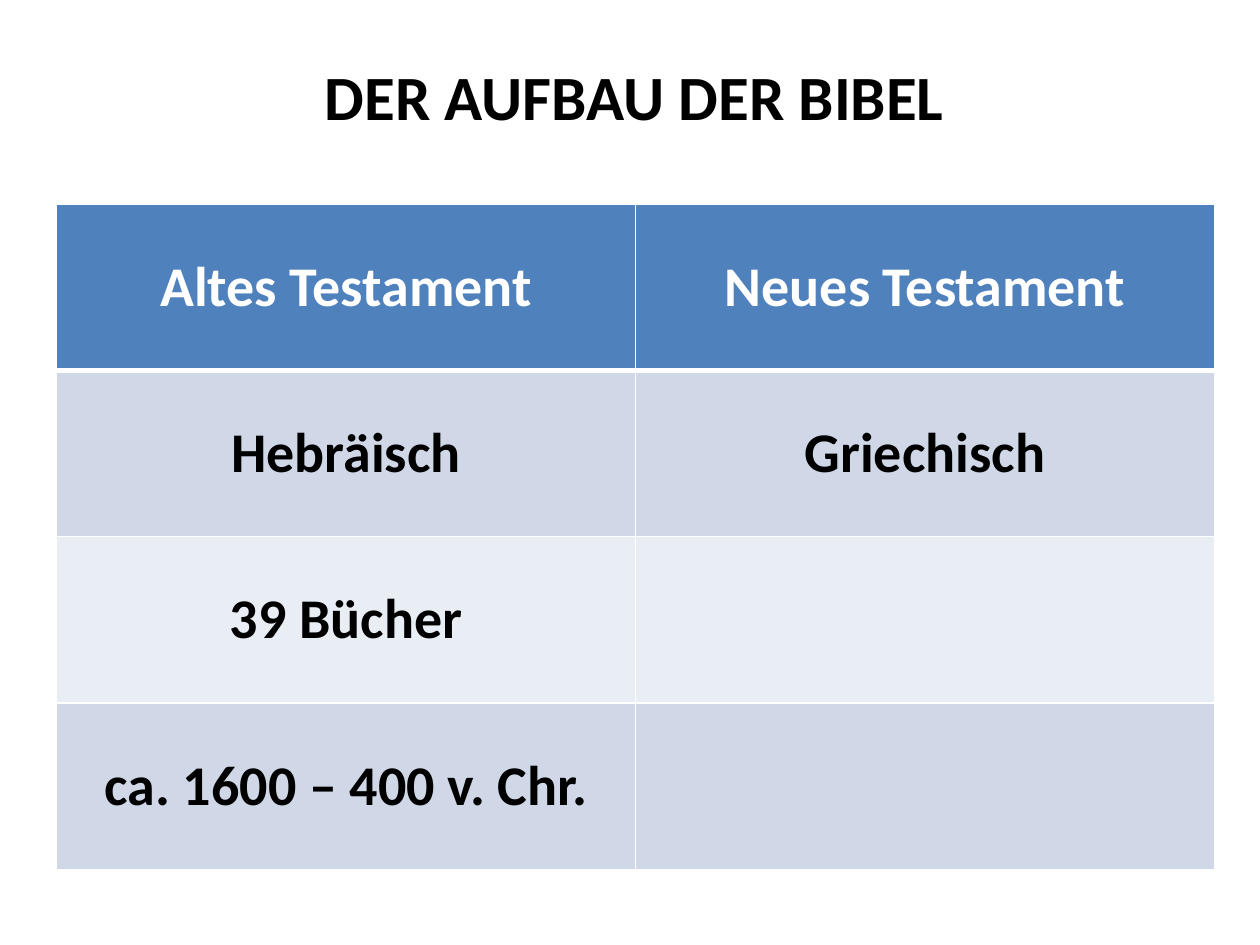
from dataclasses import dataclass

from lxml import etree
from pptx import Presentation
from pptx.dml.color import RGBColor
from pptx.enum.shapes import MSO_SHAPE
from pptx.enum.text import MSO_ANCHOR, PP_ALIGN
from pptx.oxml.ns import qn
from pptx.util import Inches, Pt

RECTANGLE = MSO_SHAPE.RECTANGLE
MIDDLE = MSO_ANCHOR.MIDDLE
CENTER = PP_ALIGN.CENTER

TITLE = "DER AUFBAU DER BIBEL"
ROWS = [
    ("Altes Testament", "Neues Testament"),
    ("Hebräisch", "Griechisch"),
    ("39 Bücher", ""),
    ("ca. 1600 – 400 v. Chr.", ""),
]


@dataclass(frozen=True)
class Theme:
    font: str = "Calibri"
    title_size: int = 36
    cell_size: int = 32
    white: str = "FFFFFF"
    black: str = "000000"
    header: str = "4F81BD"
    bands: tuple = ("D0D8E8", "E9EDF4")
    title_opacity: int = 60
    thin_line: int = 1
    thick_line: int = 3


THEME = Theme()


def write_text(frame, text, *, size, color):
    frame.word_wrap = True
    frame.vertical_anchor = MIDDLE
    para = frame.paragraphs[0]
    para.alignment = CENTER
    span = para.add_run()
    span.text = text
    span.font.name = THEME.font
    span.font.size = Pt(size)
    span.font.bold = True
    span.font.color.rgb = RGBColor.from_string(color)


def fill_solid(item, color):
    item.fill.solid()
    item.fill.fore_color.rgb = RGBColor.from_string(color)


def set_borders(cell, widths):
    properties = cell._tc.get_or_add_tcPr()
    for side, width in widths.items():
        line = etree.SubElement(properties, qn(f"a:ln{side}"), w=str(Pt(width)))
        fill = etree.SubElement(line, qn("a:solidFill"))
        etree.SubElement(fill, qn("a:srgbClr"), val=THEME.white)


def add_title(page):
    box = page.shapes.add_shape(
        RECTANGLE, Inches(0.43), Inches(0.44), Inches(9.21), Inches(0.63)
    )
    box.shadow.inherit = False
    fill_solid(box, THEME.white)
    color = box.fill._xPr.find(f".//{qn('a:srgbClr')}")
    etree.SubElement(color, qn("a:alpha"), val=str(THEME.title_opacity * 1000))
    box.line.fill.background()
    write_text(box.text_frame, TITLE, size=THEME.title_size, color=THEME.black)


def add_comparison(page):
    table = page.shapes.add_table(
        len(ROWS), len(ROWS[0]), Inches(0.45), Inches(1.62), Inches(9.19), Inches(5.28)
    ).table
    for row_index, row in enumerate(ROWS):
        is_header = row_index == 0
        fill = THEME.header if is_header else THEME.bands[(row_index - 1) % 2]
        color = THEME.white if is_header else THEME.black
        widths = dict.fromkeys("LRTB", THEME.thin_line)
        if is_header:
            widths["B"] = THEME.thick_line
        elif row_index == 1:
            widths["T"] = THEME.thick_line
        for column_index, text in enumerate(row):
            cell = table.cell(row_index, column_index)
            set_borders(cell, widths)
            fill_solid(cell, fill)
            cell.vertical_anchor = MIDDLE
            if text:
                write_text(cell.text_frame, text, size=THEME.cell_size, color=color)


def main():
    deck = Presentation()
    deck.slide_width = Inches(10)
    deck.slide_height = Inches(7.5)
    page = deck.slides.add_slide(deck.slide_layouts[6])
    add_title(page)
    add_comparison(page)
    deck.save("out.pptx")


if __name__ == "__main__":
    main()
